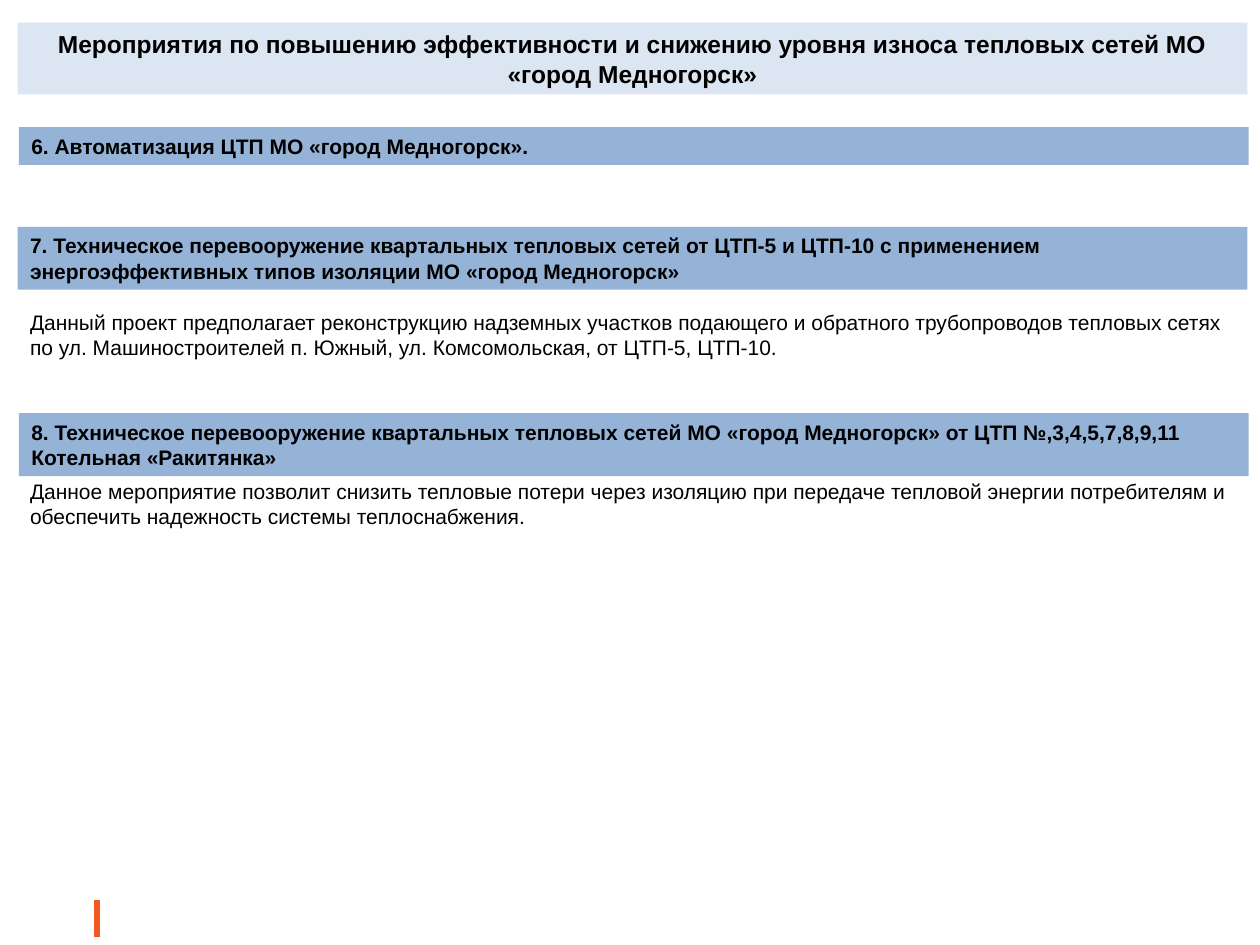
"""Build the slide on heat network improvement measures."""
from dataclasses import dataclass
from typing import Optional

from pptx import Presentation
from pptx.dml.color import RGBColor
from pptx.enum.shapes import MSO_CONNECTOR, MSO_SHAPE
from pptx.enum.text import MSO_ANCHOR, PP_ALIGN
from pptx.oxml.ns import qn
from pptx.slide import Slide
from pptx.util import Inches, Pt
from lxml.etree import SubElement


@dataclass(frozen=True)
class Theme:
    font: str = "Arial"
    title_size: int = 14
    body_size: int = 12
    text: str = "000000"
    title_fill: str = "DCE6F2"
    heading_fill: str = "95B3D7"
    accent: str = "F15922"


@dataclass(frozen=True)
class Block:
    text: str
    left: float
    top: float
    height: float
    size: int
    fill: Optional[str] = None
    centered: bool = False


THEME = Theme()
BLOCK_WIDTH = 9.76


def title(text: str) -> Block:
    return Block(text, 0.14, 0.18, 0.57, THEME.title_size, THEME.title_fill, True)


def heading(text: str, left: float, top: float, height: float = 0.5) -> Block:
    return Block(text, left, top, height, THEME.body_size, THEME.heading_fill)


def description(text: str, top: float) -> Block:
    return Block(text, 0.14, top, 0.5, THEME.body_size)


BLOCKS = [
    title("Мероприятия по повышению эффективности и снижению уровня износа "
          "тепловых сетей МО «город Медногорск»"),
    heading("6. Автоматизация ЦТП МО «город Медногорск».", 0.15, 1.01, 0.3),
    heading("7. Техническое перевооружение квартальных тепловых сетей от ЦТП-5 и ЦТП-10 "
            "с применением энергоэффективных типов изоляции МО «город Медногорск»", 0.14, 1.8),
    description("Данный проект предполагает реконструкцию надземных участков подающего и "
                "обратного трубопроводов тепловых сетях по ул. Машиностроителей п. Южный, "
                "ул. Комсомольская, от ЦТП-5, ЦТП-10.", 2.41),
    heading("8. Техническое перевооружение квартальных тепловых сетей МО «город Медногорск» "
            "от ЦТП №,3,4,5,7,8,9,11 Котельная «Ракитянка»", 0.15, 3.28),
    description("Данное мероприятие позволит снизить тепловые потери через изоляцию при "
                "передаче тепловой энергии потребителям и обеспечить надежность системы "
                "теплоснабжения.", 3.75),
]


def draw_block(s: Slide, block: Block) -> None:
    box = (Inches(block.left), Inches(block.top), Inches(BLOCK_WIDTH), Inches(block.height))
    if block.fill:
        sp = s.shapes.add_shape(MSO_SHAPE.RECTANGLE, *box)
        sp.shadow.inherit = False
        sp.fill.solid()
        sp.fill.fore_color.rgb = RGBColor.from_string(block.fill)
        sp.line.fill.background()
    else:
        sp = s.shapes.add_textbox(*box)
    tf = sp.text_frame
    tf.word_wrap = True
    tf.vertical_anchor = MSO_ANCHOR.MIDDLE if block.centered else MSO_ANCHOR.TOP
    tf.text = block.text
    p = tf.paragraphs[0]
    p.alignment = PP_ALIGN.CENTER if block.centered else PP_ALIGN.LEFT
    font = p.runs[0].font
    font.name = THEME.font
    font.size = Pt(block.size)
    font.bold = block.fill is not None
    font.color.rgb = RGBColor.from_string(THEME.text)


def draw_footer_mark(s: Slide) -> None:
    x = Inches(0.77)
    mark = s.shapes.add_connector(MSO_CONNECTOR.STRAIGHT, x, Inches(7.14), x, Inches(7.44))
    mark.line.color.rgb = RGBColor.from_string(THEME.accent)
    mark.line.width = Pt(3)
    SubElement(mark._element.spPr, qn("a:effectLst"))


def main() -> None:
    prs = Presentation()
    prs.slide_width, prs.slide_height = Inches(10), Inches(7.5)
    s = prs.slides.add_slide(prs.slide_layouts[6])
    draw_footer_mark(s)
    for block in BLOCKS:
        draw_block(s, block)
    prs.save("out.pptx")


if __name__ == "__main__":
    main()
